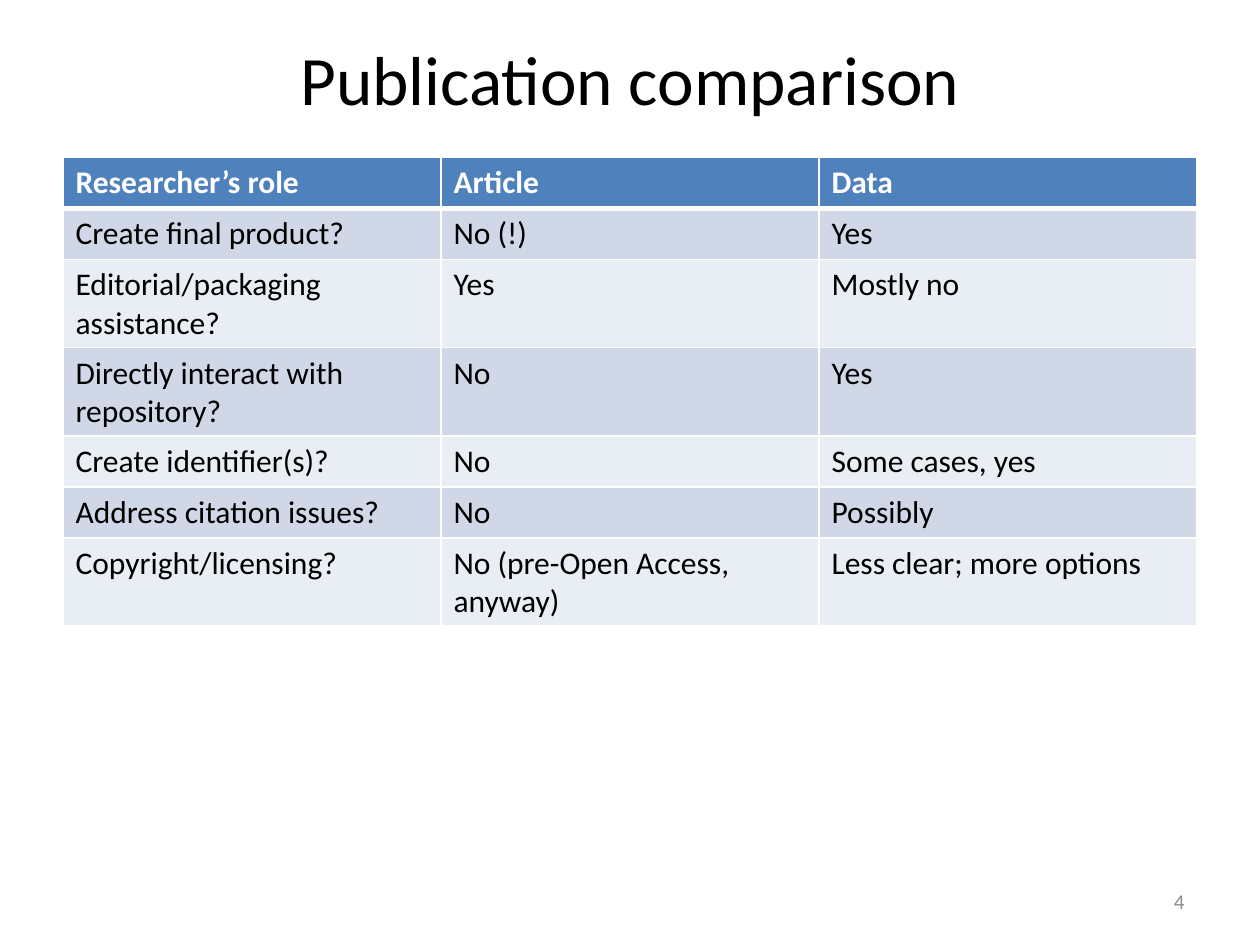
from dataclasses import dataclass

from lxml import etree
from pptx import Presentation
from pptx import util as u
from pptx.dml.color import RGBColor
from pptx.enum import text
from pptx.oxml.ns import qn


@dataclass(frozen=True)
class Theme:
    font: str = "Calibri"
    title_size: float = 39.6
    table_size: float = 18
    number_size: float = 12
    ink: str = "000000"
    paper: str = "FFFFFF"
    muted: str = "8C8C8C"
    header: str = "4F81BD"
    bands: tuple[str, str] = ("D0D8E8", "E9EDF4")
    rule: float = 1
    header_rule: float = 3


@dataclass(frozen=True)
class Area:
    """A rectangle given in shares of the slide's width and height."""
    left: float
    top: float
    width: float
    height: float

    def lengths(self, deck) -> tuple[int, int, int, int]:
        wide, high = deck.slide_width, deck.slide_height
        return (int(self.left * wide), int(self.top * high),
                int(self.width * wide), int(self.height * high))


@dataclass(frozen=True)
class Comparison:
    role: str
    article: str
    data: str

    def cells(self) -> tuple[str, str, str]:
        return self.role, self.article, self.data


THEME = Theme()
MARGIN = 0.05
CONTENT = 1 - 2 * MARGIN
TITLE_AREA = Area(MARGIN, 0.04, CONTENT, 0.085)
TABLE_AREA = Area(MARGIN, 1 / 6, CONTENT, 0.38)
NUMBER_AREA = Area(0.717, 0.927, 0.233, 0.053)

HEADINGS = Comparison("Researcher’s role", "Article", "Data")
COMPARISONS = [
    Comparison("Create final product?", "No (!)", "Yes"),
    Comparison("Editorial/packaging assistance?", "Yes", "Mostly no"),
    Comparison("Directly interact with repository?", "No", "Yes"),
    Comparison("Create identifier(s)?", "No", "Some cases, yes"),
    Comparison("Address citation issues?", "No", "Possibly"),
    Comparison("Copyright/licensing?", "No (pre-Open Access, anyway)",
               "Less clear; more options"),
]


def write(frame, words: str, size: float, color: str, bold: bool = False,
          align=text.PP_ALIGN.LEFT, anchor=text.MSO_ANCHOR.MIDDLE) -> None:
    frame.word_wrap = True
    frame.vertical_anchor = anchor
    para = frame.paragraphs[0]
    para.alignment = align
    span = para.add_run()
    span.text = words
    span.font.name = THEME.font
    span.font.size = u.Pt(size)
    span.font.bold = bold
    span.font.color.rgb = RGBColor.from_string(color)


def add_borders(cell, top: float, bottom: float) -> None:
    """Draw cell borders; call before filling, as the fill must follow them."""
    properties = cell._tc.get_or_add_tcPr()
    widths = {"a:lnL": THEME.rule, "a:lnR": THEME.rule,
              "a:lnT": top, "a:lnB": bottom}
    for tag, width in widths.items():
        line = etree.SubElement(properties, qn(tag), w=str(u.Pt(width)))
        fill = etree.SubElement(line, qn("a:solidFill"))
        etree.SubElement(fill, qn("a:srgbClr"), val=THEME.paper)


def add_title(deck, slide, words: str) -> None:
    title = slide.shapes.title
    title.left, title.top, title.width, title.height = TITLE_AREA.lengths(deck)
    write(title.text_frame, words, THEME.title_size, THEME.ink,
          align=text.PP_ALIGN.CENTER)


def add_comparison_table(deck, slide) -> None:
    rows = [HEADINGS, *COMPARISONS]
    table = slide.shapes.add_table(
        len(rows), len(HEADINGS.cells()), *TABLE_AREA.lengths(deck)).table
    for index, row in enumerate(rows):
        is_header = index == 0
        table.rows[index].height = u.Inches(0.405)
        top = THEME.header_rule if index == 1 else THEME.rule
        bottom = THEME.header_rule if is_header else THEME.rule
        fill = THEME.header if is_header else THEME.bands[(index - 1) % 2]
        for cell, words in zip(table.rows[index].cells, row.cells()):
            add_borders(cell, top, bottom)
            cell.fill.solid()
            cell.fill.fore_color.rgb = RGBColor.from_string(fill)
            write(cell.text_frame, words, THEME.table_size,
                  THEME.paper if is_header else THEME.ink, bold=is_header,
                  anchor=text.MSO_ANCHOR.TOP)


def add_page_number(deck, slide, number: int) -> None:
    box = slide.shapes.add_textbox(*NUMBER_AREA.lengths(deck))
    write(box.text_frame, str(number), THEME.number_size, THEME.muted,
          align=text.PP_ALIGN.RIGHT)


def main() -> None:
    deck = Presentation()
    deck.slide_width, deck.slide_height = u.Inches(10), u.Inches(7.5)
    slide = deck.slides.add_slide(deck.slide_layouts.get_by_name("Title Only"))
    add_title(deck, slide, "Publication comparison")
    add_page_number(deck, slide, 4)
    add_comparison_table(deck, slide)
    deck.save("out.pptx")


if __name__ == "__main__":
    main()
